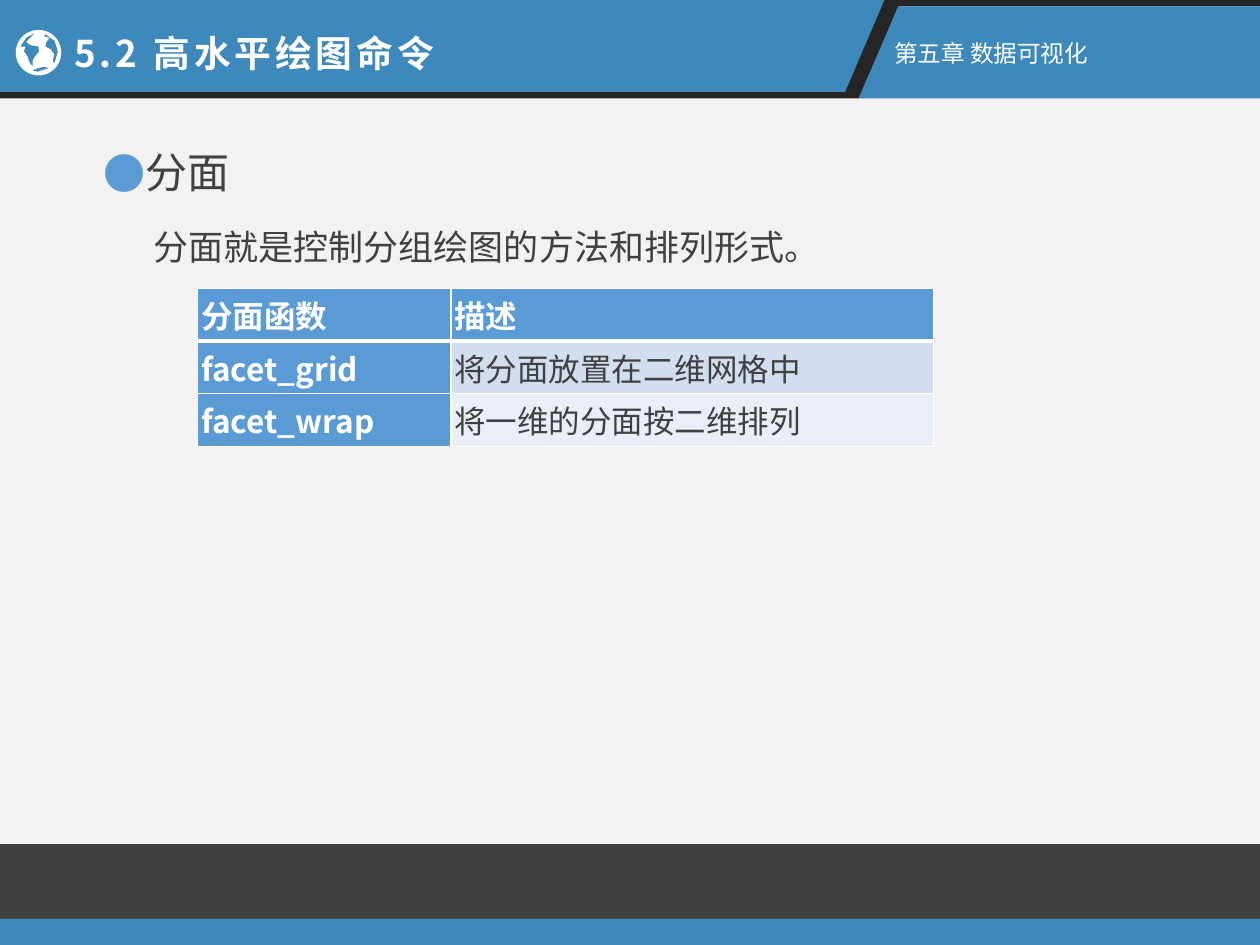
from dataclasses import dataclass
from math import cos, pi, sin

from lxml.etree import SubElement
from pptx import Presentation
from pptx.dml.color import RGBColor
from pptx.enum.shapes import MSO_SHAPE as Shape
from pptx.enum.text import MSO_ANCHOR as Anchor, MSO_AUTO_SIZE as AutoSize, PP_ALIGN as Align
from pptx.oxml.ns import qn
from pptx.util import Pt

WIDTH, HEIGHT = 720, 540
BAR_BOTTOM, BAND_BOTTOM, EDGE = 52.6, 56.2, 3.6


@dataclass(frozen=True)
class Theme:
    font: str = "Noto Sans CJK SC"
    paper: str = "F2F2F2"
    blue: str = "3D89BC"
    black: str = "262626"
    gray: str = "404040"
    white: str = "FFFFFF"
    accent: str = "5B9BD5"
    stripes: tuple = ("D2DEEF", "EAEFF7")
    title_size: float = 21
    chapter_size: float = 13.5
    heading_size: float = 24
    body_size: float = 20
    table_size: float = 18


def paint(fill, color):
    fill.solid()
    fill.fore_color.rgb = RGBColor.from_string(color)


class SlideBuilder:
    def __init__(self, page, theme):
        self.page, self.theme = page, theme
        paint(page.background.fill, theme.paper)

    def finish(self, shape, color):
        shape.shadow.inherit = False
        paint(shape.fill, color)
        shape.line.fill.background()

    def rectangle(self, left, top, width, height, color):
        shape = self.page.shapes.add_shape(
            Shape.RECTANGLE, Pt(left), Pt(top), Pt(width), Pt(height))
        self.finish(shape, color)

    def outline(self, contours, color):
        """Fill closed contours as one shape; inner contours become holes."""
        contours = [[(Pt(x), Pt(y)) for x, y in points] for points in contours]
        builder = self.page.shapes.build_freeform(*contours[0][0])
        builder.add_line_segments(contours[0][1:])
        for points in contours[1:]:
            builder.move_to(*points[0])
            builder.add_line_segments(points[1:])
        self.finish(builder.convert_to_shape(), color)

    def span(self, para, text, size, color, bold=False, spacing=0):
        span = para.add_run()
        span.text = text
        font = span.font
        font.name, font.size, font.bold = self.theme.font, Pt(size), bold
        font.color.rgb = RGBColor.from_string(color)
        properties = span.font._element
        SubElement(properties, qn("a:ea")).set("typeface", self.theme.font)
        if spacing:
            properties.set("spc", str(round(spacing * 100)))

    def fill_box(self, box, place, text, size, color, wrap=True, **style):
        box.left, box.top, box.width, box.height = map(Pt, place)
        frame = box.text_frame
        frame.word_wrap, frame.auto_size = wrap, AutoSize.NONE
        frame.vertical_anchor = Anchor.TOP
        para = frame.paragraphs[0]
        para.alignment, para.space_before = Align.LEFT, Pt(0)
        self.span(para, text, size, color, **style)
        return para

    def text(self, place, *args, **style):
        box = self.page.shapes.add_textbox(*map(Pt, place))
        self.fill_box(box, place, *args, **style)

    def title(self, place, *args, **style):
        box = self.page.shapes.title
        box.element.getparent().append(box.element)  # in front of the header bands
        self.fill_box(box, place, *args, **style)

    def bullet(self, place, *args):
        para = self.fill_box(self.page.placeholders[1], place, *args)
        properties = para._p.get_or_add_pPr()
        properties.set("marL", str(Pt(22.5)))
        properties.set("indent", str(Pt(-22.5)))
        color = SubElement(properties, qn("a:buClr"))
        SubElement(color, qn("a:srgbClr")).set("val", self.theme.accent)
        SubElement(properties, qn("a:buFont")).set("typeface", self.theme.font)
        SubElement(properties, qn("a:buChar")).set("char", "●")

    def border(self, cell, side, width):
        properties = cell._tc.get_or_add_tcPr()
        line = SubElement(properties, qn(f"a:ln{side}"), w=str(Pt(width)))
        fill = SubElement(line, qn("a:solidFill"))
        SubElement(fill, qn("a:srgbClr")).set("val", self.theme.white)

    def table(self, left, top, widths, row_height, rows):
        theme = self.theme
        table = self.page.shapes.add_table(
            len(rows), len(widths), Pt(left), Pt(top),
            Pt(sum(widths)), Pt(row_height * len(rows))).table
        for column, width in zip(table.columns, widths):
            column.width = Pt(width)
        for i, texts in enumerate(rows):
            table.rows[i].height = Pt(row_height)
            for j, text in enumerate(texts):
                cell = table.cell(i, j)
                label = i == 0 or j == 0
                cell.margin_left = cell.margin_right = Pt(2)
                cell.margin_top = cell.margin_bottom = Pt(2)
                cell.vertical_anchor = Anchor.MIDDLE
                para = cell.text_frame.paragraphs[0]
                para.alignment = Align.JUSTIFY
                self.span(para, text, theme.table_size,
                          theme.white if label else theme.gray, bold=label)
                for side in "LRTB":
                    under_header = (i, side) in ((0, "B"), (1, "T"))
                    self.border(cell, side, 3 if under_header else 1)
                paint(cell.fill, theme.accent if label else theme.stripes[(i - 1) % 2])


def globe_contours():
    center_x, center_y, radius, steps = 22, 30.1, 13, 48
    disc = [(center_x + radius * cos(2 * pi * k / steps),
             center_y + radius * sin(2 * pi * k / steps)) for k in range(steps)]
    east = [(33.1, 29.5), (31, 36.7), (30.2, 34.6), (31, 31), (28.8, 28.1),
            (25.9, 26.6), (26.3, 24.5), (28.1, 21.6), (25.2, 20.9),
            (25.9, 19.4), (31.3, 23.4)]
    west = [(20.2, 18.7), (18.7, 20.2), (17.3, 21.6), (15.1, 23.8), (16.6, 25.2),
            (18, 25.9), (22, 26.6), (22.3, 29.5), (19.4, 33.1), (18.7, 34.6),
            (18.7, 38.2), (16.6, 35.3), (15.8, 32.4), (13.7, 29.5),
            (14.4, 26.6), (11.5, 26.6), (15.1, 21.4)]
    south = [(18, 40.3), (20.2, 39.6), (21.6, 38.9), (25.2, 38.2), (28.1, 38.9),
             (21.6, 41)]
    return [disc, east, west, south]


def main():
    deck = Presentation()
    deck.slide_width, deck.slide_height = Pt(WIDTH), Pt(HEIGHT)
    theme = Theme()
    slide = SlideBuilder(deck.slides.add_slide(deck.slide_layouts[1]), theme)

    slide.rectangle(0, 482.4, WIDTH, 43.2, theme.gray)
    slide.rectangle(0, 525, WIDTH, 15, theme.blue)

    slide.outline([[(0, 0), (507.6, 0), (485.3, BAR_BOTTOM), (0, BAR_BOTTOM)]], theme.blue)
    slide.outline([[(505.5, 0), (WIDTH, 0), (WIDTH, EDGE), (513.4, EDGE),
                    (491, BAND_BOTTOM), (0, BAND_BOTTOM), (0, BAR_BOTTOM),
                    (483, BAR_BOTTOM)]], theme.black)
    slide.outline([[(513.4, EDGE), (WIDTH, EDGE), (WIDTH, BAND_BOTTOM),
                    (490.6, BAND_BOTTOM)]], theme.blue)
    slide.title((35.3, 13.7, 226.8, 32.4), "5.2 高水平绘图命令",
                theme.title_size, theme.white, wrap=False, bold=True, spacing=2.2)
    slide.outline(globe_contours(), theme.white)
    slide.text((504, 18.7, 127.4, 23.8), "第五章 数据可视化",
               theme.chapter_size, theme.white, wrap=False)

    slide.bullet((51.8, 79.9, 182.9, 36), "分面", theme.heading_size, theme.gray)
    slide.text((80.6, 125.3, 569.5, 31.7), "分面就是控制分组绘图的方法和排列形式。",
               theme.body_size, theme.gray)
    slide.table(113, 164.9, (144.7, 275.8), 28.1, [
        ("分面函数", "描述"),
        ("facet_grid", "将分面放置在二维网格中"),
        ("facet_wrap", "将一维的分面按二维排列"),
    ])
    deck.save("out.pptx")


if __name__ == "__main__":
    main()
